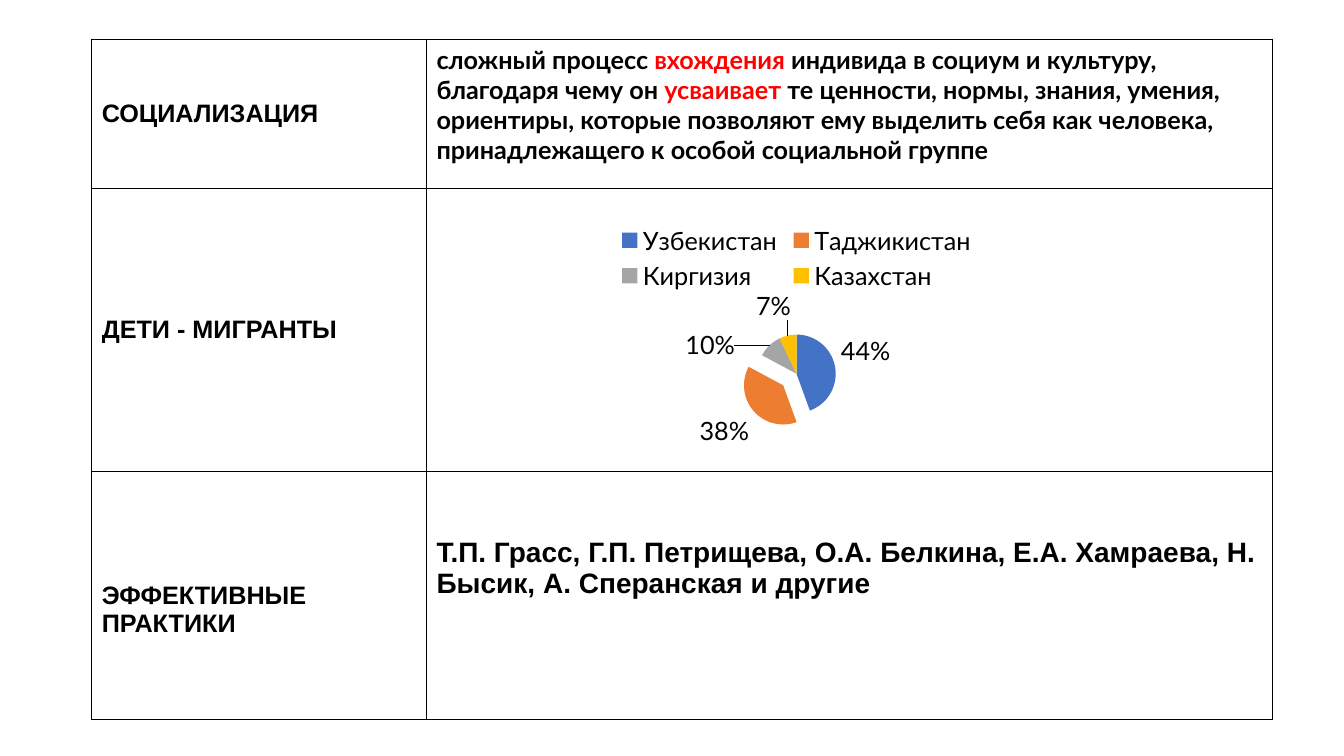
from lxml.etree import SubElement
from pptx import Presentation
from pptx.chart.data import CategoryChartData
from pptx.dml.color import RGBColor
from pptx.enum.chart import XL_CHART_TYPE, XL_LABEL_POSITION, XL_LEGEND_POSITION
from pptx.enum.text import MSO_ANCHOR
from pptx.oxml import parse_xml
from pptx.oxml.ns import nsdecls, qn
from pptx.util import Inches, Pt

COLORS = {
    "text": "000000",
    "accent": "FF0000",
    "uzbekistan": "4472C4",
    "tajikistan": "ED7D31",
    "kyrgyzstan": "A5A5A5",
    "kazakhstan": "FFC000",
}


def rgb(color):
    return RGBColor.from_string(COLORS[color])


def manual_layout(**values):
    settings = "".join(f'<c:{tag} val="{value}"/>' for tag, value in values.items())
    return parse_xml(
        f'<c:layout {nsdecls("c")}><c:manualLayout>{settings}</c:manualLayout></c:layout>'
    )


class SlideBuilder:
    def __init__(self, slide, heading_font, body_font):
        self.slide = slide
        self.heading_font = heading_font
        self.body_font = body_font

    def table(self, left, top, column_widths, row_heights):
        grid = self.slide.shapes.add_table(
            len(row_heights), len(column_widths), Inches(left), Inches(top),
            Inches(sum(column_widths)), Inches(sum(row_heights)),
        ).table
        grid.first_row = grid.horz_banding = False
        for column, width in zip(grid.columns, column_widths):
            column.width = Inches(width)
        for row, height in zip(grid.rows, row_heights):
            row.height = Inches(height)
        for cell in grid.iter_cells():
            self.borders(cell)
            cell.fill.background()
        return grid

    def borders(self, cell):
        properties = cell._tc.get_or_add_tcPr()
        for side in ("a:lnL", "a:lnR", "a:lnT", "a:lnB"):
            border = SubElement(properties, qn(side), w=str(Pt(1)))
            fill = SubElement(border, qn("a:solidFill"))
            SubElement(fill, qn("a:srgbClr"), val=COLORS["text"])

    def cell_text(self, cell, parts, font, size=18, anchor=MSO_ANCHOR.TOP, margin_top=0.05):
        cell.vertical_anchor = anchor
        cell.margin_top = Inches(margin_top)
        paragraph = cell.text_frame.paragraphs[0]
        for wording, color in parts:
            run = paragraph.add_run()
            run.text = wording
            run.font.name = font
            run.font.size = Pt(size)
            run.font.bold = True
            run.font.color.rgb = rgb(color)

    def pie(self, left, top, width, height, shares, colors):
        data = CategoryChartData()
        data.categories = list(shares)
        data.add_series("Series 1", list(shares.values()))
        chart = self.slide.shapes.add_chart(
            XL_CHART_TYPE.PIE, Inches(left), Inches(top), Inches(width), Inches(height), data
        ).chart
        chart.has_title = False
        chart.font.name = self.body_font
        chart.font.size = Pt(18)
        chart.font.color.rgb = rgb("text")
        chart.has_legend = True
        chart.legend.position = XL_LEGEND_POSITION.TOP
        chart.legend.include_in_layout = False
        plot = chart.plots[0]
        plot.vary_by_categories = True
        for index, color in enumerate(colors):
            fill = plot.series[0].points[index].format.fill
            fill.solid()
            fill.fore_color.rgb = rgb(color)
        labels = plot.series[0].data_labels
        labels.show_percentage = True
        labels.show_value = False
        labels.number_format = "0%"
        labels.number_format_is_linked = False
        labels.position = XL_LABEL_POSITION.OUTSIDE_END
        leader = labels._element.find(qn("c:showLeaderLines"))
        if leader is None:
            leader = SubElement(labels._element, qn("c:showLeaderLines"))
        leader.set("val", "1")
        return chart

    def explode(self, chart, index, percent):
        point = chart.plots[0].series[0]._element.findall(qn("c:dPt"))[index]
        explosion = parse_xml(f'<c:explosion {nsdecls("c")} val="{percent}"/>')
        point.find(qn("c:spPr")).addprevious(explosion)

    def place_plot(self, chart, x, y, w, h):
        area = chart._chartSpace.chart.plotArea
        for layout in area.findall(qn("c:layout")):
            area.remove(layout)
        area.insert(0, manual_layout(
            layoutTarget="inner", xMode="edge", yMode="edge", x=x, y=y, w=w, h=h
        ))

    def shift_label(self, chart, index, x, y):
        label = chart.plots[0].series[0].points[index].data_label
        label.position = XL_LABEL_POSITION.OUTSIDE_END
        element = label._dLbl
        element.find(qn("c:idx")).addnext(manual_layout(x=x, y=y))
        element.find(qn("c:showVal")).set("val", "0")
        element.find(qn("c:showPercent")).set("val", "1")


def main():
    presentation = Presentation()
    presentation.slide_width = Inches(13.33)
    presentation.slide_height = Inches(7.5)
    slide = presentation.slides.add_slide(presentation.slide_layouts[6])
    builder = SlideBuilder(slide, "Arial", "Lato")

    concepts = builder.table(0.91, 0.39, [3.32, 8.39], [1.48, 2.81, 2.46])
    headings = [("СОЦИАЛИЗАЦИЯ", 0.05), ("ДЕТИ - МИГРАНТЫ", 0.05), ("ЭФФЕКТИВНЫЕ ПРАКТИКИ", 0.33)]
    for row, (heading, margin_top) in enumerate(headings):
        builder.cell_text(
            concepts.cell(row, 0), [(heading, "text")], builder.heading_font,
            anchor=MSO_ANCHOR.MIDDLE, margin_top=margin_top,
        )
    definition = [
        ("сложный процесс ", "text"),
        ("вхождения", "accent"),
        (" индивида в социум и культуру, благодаря чему он ", "text"),
        ("усваивает", "accent"),
        (" те ценности, нормы, знания, умения, ориентиры, которые позволяют ему "
         "выделить себя как человека, принадлежащего к особой социальной группе", "text"),
    ]
    builder.cell_text(concepts.cell(0, 1), definition, builder.body_font)
    researchers = (
        "Т.П. Грасс, Г.П. Петрищева, О.А. Белкина, Е.А. Хамраева, "
        "Н. Бысик, А. Сперанская и другие"
    )
    builder.cell_text(
        concepts.cell(2, 1), [(researchers, "text")], builder.heading_font, 20, margin_top=0.65
    )

    countries = builder.pie(
        5.74, 2.11, 4.32, 2.37,
        {"Узбекистан": 44, "Таджикистан": 38, "Киргизия": 10, "Казахстан": 7},
        ["uzbekistan", "tajikistan", "kyrgyzstan", "kazakhstan"],
    )
    builder.explode(countries, 1, 45)
    builder.place_plot(countries, 0.41, 0.51, 0.18, 0.33)
    builder.shift_label(countries, 2, -0.07, 0.08)
    builder.shift_label(countries, 3, 0.01, -0.04)

    presentation.save("out.pptx")


if __name__ == "__main__":
    main()
